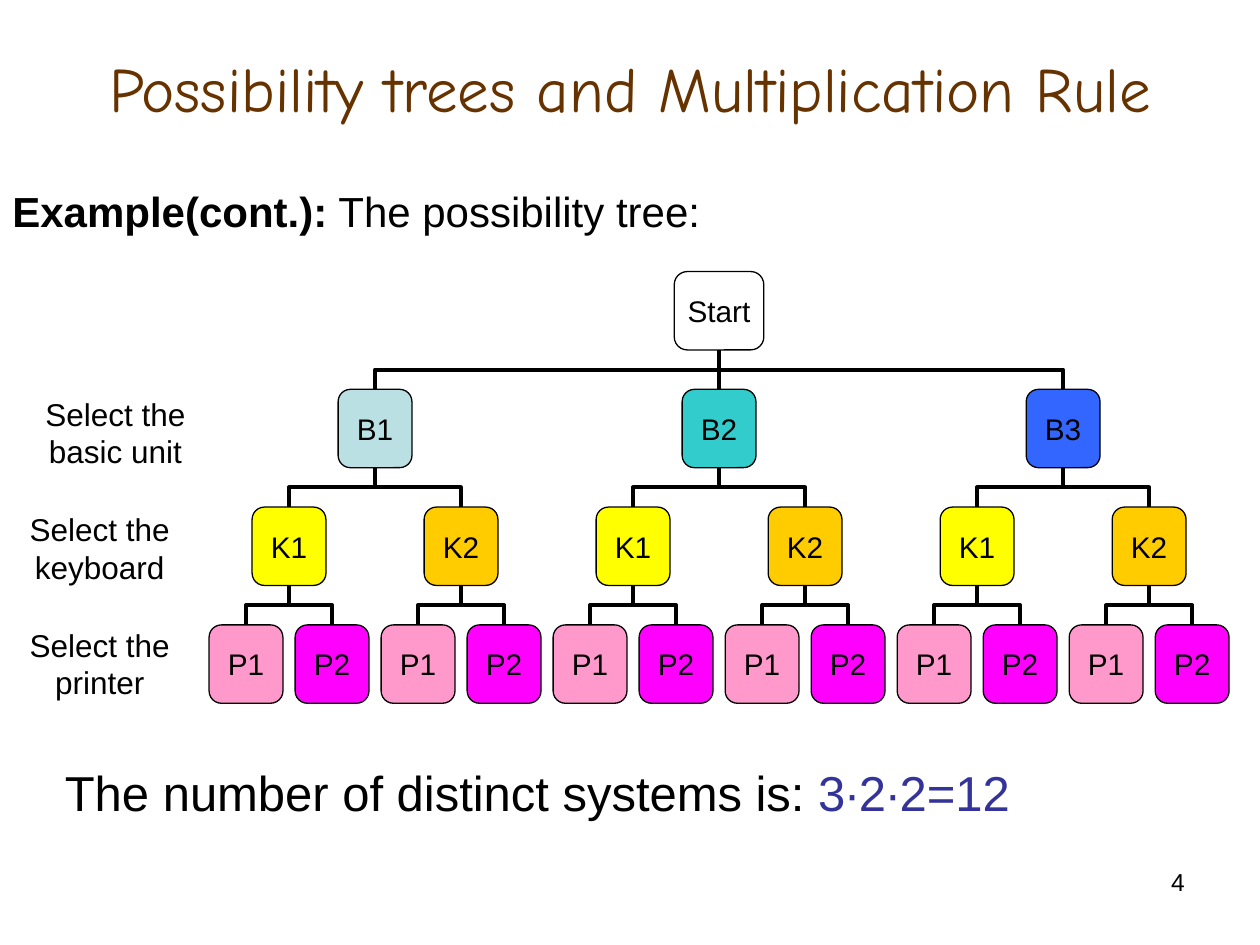
from dataclasses import dataclass

from pptx import Presentation
from pptx.dml.color import RGBColor
from pptx.enum import shapes, text
from pptx.oxml import ns
from pptx.util import Pt


@dataclass(frozen=True)
class Theme:
    body_font: str = "Arial"
    title_font: str = "Comic Neue"
    ink: str = "000000"
    title_ink: str = "663300"
    answer_ink: str = "333399"
    title_size: float = 36
    answer_size: float = 28
    heading_size: float = 24
    label_size: float = 18
    node_size: float = 17
    number_size: float = 14
    node_line: float = 0.75
    branch_line: float = 2.25


THEME = Theme()
LEVELS = [
    [("Start", "FFFFFF")],
    [("B1", "BBE0E3"), ("B2", "33CCCC"), ("B3", "3366FF")],
    [("K1", "FFFF00"), ("K2", "FFCC00")],
    [("P1", "FF99CC"), ("P2", "FF00FF")],
]
TREE_LEFT, TREE_RIGHT, TREE_TOP = 116, 705.8, 155.2
LEVEL_STEP, NODE_HEIGHT, NODE_WIDTH, START_WIDTH = 67.3, 44.8, 42.2, 51.2
BRANCH_HEIGHT = LEVEL_STEP - NODE_HEIGHT
CENTER, LEFT, RIGHT = text.PP_ALIGN.CENTER, text.PP_ALIGN.LEFT, text.PP_ALIGN.RIGHT
MIDDLE, TOP = text.MSO_ANCHOR.MIDDLE, text.MSO_ANCHOR.TOP


def apply(target, **values):
    for name, value in values.items():
        setattr(target, name, value)


def write(frame, runs, align, size, font=THEME.body_font):
    paragraph = frame.paragraphs[0]
    paragraph.alignment = align
    for words, color, bold in runs:
        run = paragraph.add_run()
        run.text = words
        apply(run.font, name=font, size=Pt(size), bold=bold)
        run.font.color.rgb = RGBColor.from_string(color)


def add_text(slide, place, runs, size, align=LEFT, anchor=TOP, font=THEME.body_font):
    frame = slide.shapes.add_textbox(*map(Pt, place)).text_frame
    apply(frame, word_wrap=True, vertical_anchor=anchor)
    write(frame, runs, align, size, font)


def add_node(slide, name, color, center, top, width):
    node = slide.shapes.add_shape(
        shapes.MSO_SHAPE.ROUNDED_RECTANGLE,
        Pt(center - width / 2), Pt(top), Pt(width), Pt(NODE_HEIGHT))
    node.shadow.inherit = False
    node.fill.solid()
    node.fill.fore_color.rgb = RGBColor.from_string(color)
    node.line.color.rgb = RGBColor.from_string(THEME.ink)
    node.line.width = Pt(THEME.node_line)
    apply(node.text_frame, word_wrap=False, vertical_anchor=MIDDLE,
          margin_left=Pt(2), margin_right=Pt(2), margin_top=Pt(1), margin_bottom=Pt(1))
    write(node.text_frame, [(name, THEME.ink, False)], CENTER, THEME.node_size)
    return node


def add_line(slide, kind, begin, end):
    line = slide.shapes.add_connector(kind, *map(Pt, begin + end))
    line.line.color.rgb = RGBColor.from_string(THEME.ink)
    line.line.width = Pt(THEME.branch_line)
    properties = line._element.spPr
    properties.append(properties.makeelement(ns.qn("a:effectLst"), {}))
    return line


def add_branch(slide, parent, parent_center, child, child_center, child_top):
    spread = child_center - parent_center
    if abs(spread) < 0.01:
        line = add_line(slide, shapes.MSO_CONNECTOR.STRAIGHT,
                        (child_center, child_top),
                        (parent_center, child_top - BRANCH_HEIGHT))
        line.begin_connect(child, 0)
        line.end_connect(parent, 2)
        return
    side = 1 if spread > 0 else -1
    middle_x = (child_center + parent_center) / 2
    middle_y = child_top - BRANCH_HEIGHT / 2
    half_width, half_height = side * BRANCH_HEIGHT / 2, abs(spread) / 2
    line = add_line(slide, shapes.MSO_CONNECTOR.ELBOW,
                    (middle_x + half_width, middle_y - half_height),
                    (middle_x - half_width, middle_y + half_height))
    quarter_turns = 1 if side > 0 else 3
    line._element.spPr.find(ns.qn("a:xfrm")).set("rot", str(quarter_turns * 5400000))


def add_subtree(slide, level, choice, left, right, parent=None, parent_center=None):
    name, color = choice
    center = (left + right) / 2
    top = TREE_TOP + level * LEVEL_STEP
    node = add_node(slide, name, color, center, top, NODE_WIDTH if level else START_WIDTH)
    if parent is not None:
        add_branch(slide, parent, parent_center, node, center, top)
    if level + 1 < len(LEVELS):
        choices = LEVELS[level + 1]
        share = (right - left) / len(choices)
        for index, child in enumerate(choices):
            start = left + index * share
            add_subtree(slide, level + 1, child, start, start + share, node, center)


def main():
    deck = Presentation()
    apply(deck, slide_width=Pt(720), slide_height=Pt(540))
    slide = deck.slides.add_slide(deck.slide_layouts[6])
    ink = THEME.ink

    add_text(slide, (0, 21.6, 720, 56.2),
             [("Possibility trees and Multiplication Rule", THEME.title_ink, False)],
             THEME.title_size, CENTER, MIDDLE, THEME.title_font)
    add_text(slide, (0, 102.5, 522, 36),
             [("Example(cont.):", ink, True), (" The possibility tree:", ink, False)],
             THEME.heading_size)
    add_subtree(slide, 0, LEVELS[0][0], TREE_LEFT, TREE_RIGHT)
    for step, top, width in [("basic unit", 222, 132), ("keyboard", 288, 114),
                             ("printer", 354, 114)]:
        add_text(slide, (0, top, width, 50.4), [(f"Select the {step}", ink, False)],
                 THEME.label_size, CENTER)
    add_text(slide, (30, 432, 660, 41),
             [("The number of distinct systems is: ", ink, False),
              ("3∙2∙2=12", THEME.answer_ink, False)], THEME.answer_size)
    add_text(slide, (516, 492, 168, 37.5), [("4", ink, False)], THEME.number_size, RIGHT)
    deck.save("out.pptx")


if __name__ == "__main__":
    main()
